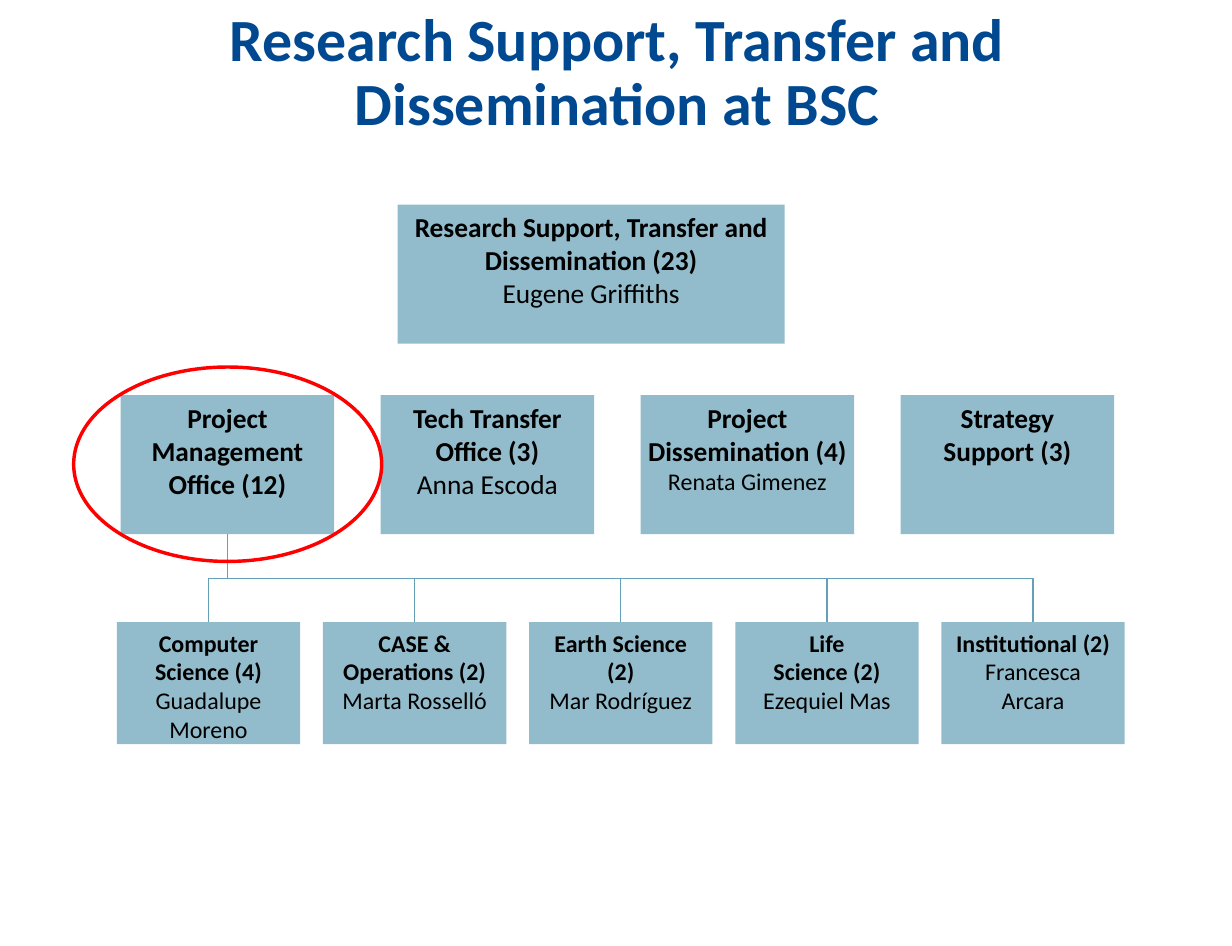
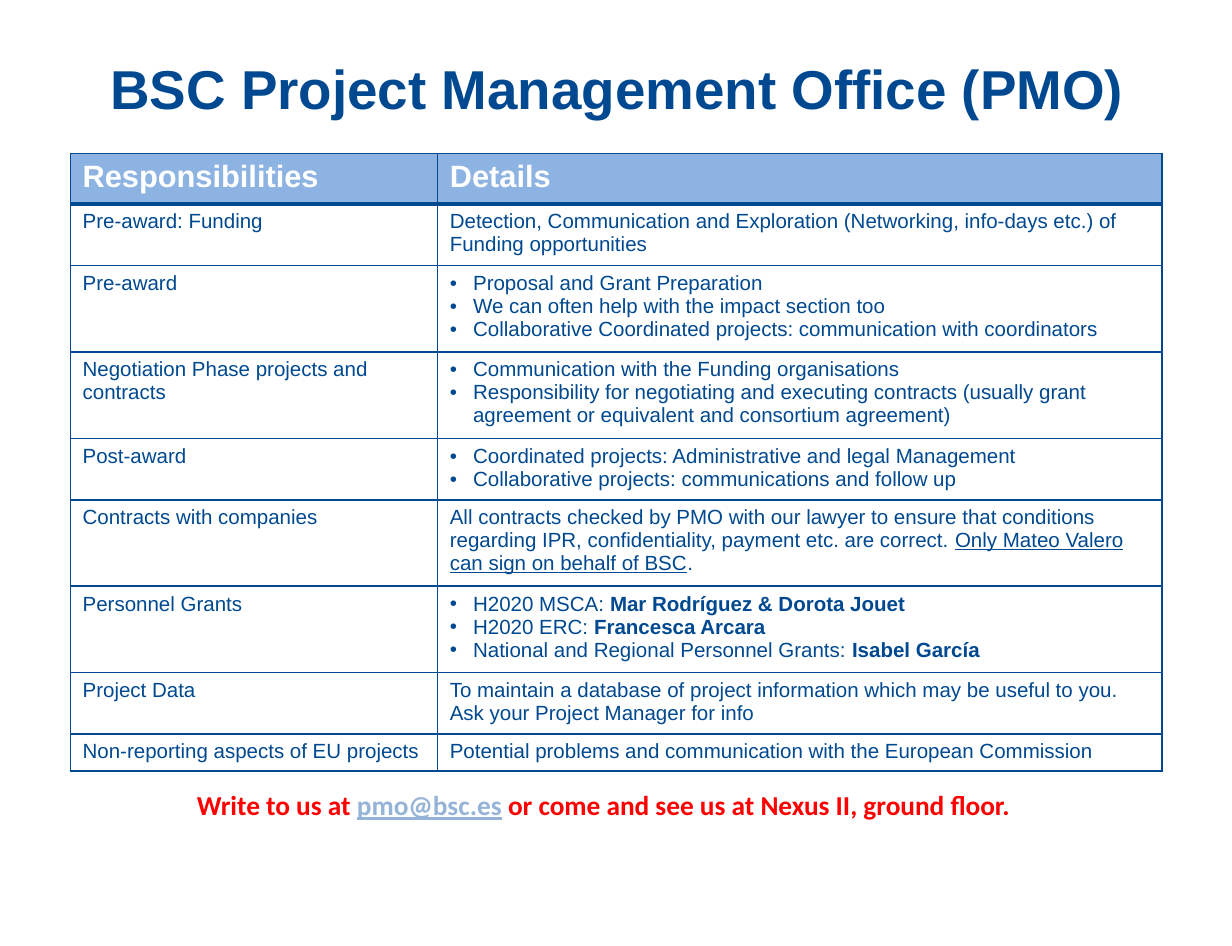
from lxml import etree
from pptx import Presentation
from pptx.dml.color import RGBColor
from pptx.enum.shapes import MSO_CONNECTOR, MSO_SHAPE
from pptx.enum.text import MSO_ANCHOR, PP_ALIGN
from pptx.oxml.ns import qn
from pptx.util import Cm, Pt

ELBOW = MSO_CONNECTOR.ELBOW
RECTANGLE, OVAL = MSO_SHAPE.RECTANGLE, MSO_SHAPE.OVAL
TOP, MIDDLE = MSO_ANCHOR.TOP, MSO_ANCHOR.MIDDLE
LEFT, CENTER = PP_ALIGN.LEFT, PP_ALIGN.CENTER
SIDE_TOP, SIDE_BOTTOM = 0, 2
TITLE_ONLY = 5

COLORS = {
    "navy": "004990", "teal": "64A0B6", "red": "FF0000", "black": "000000",
    "white": "FFFFFF", "header": "8DB3E2", "link": "95B3D7",
}
BOX_OPACITY = 70

# Each box: bold heading lines, then the person in charge
CHART_TITLE = "Research Support, Transfer and\vDissemination at BSC"
DEPARTMENT = (["Research Support, Transfer and Dissemination (23)"], "Eugene Griffiths")
OFFICES = [
    (["Project Management Office (12)"], ""),
    (["Tech Transfer Office (3)"], "Anna Escoda"),
    (["Project Dissemination (4)"], "Renata Gimenez"),
    (["Strategy Support (3)"], ""),
]
NARROW_OFFICE = 2
TEAMS = [
    (["Computer Science (4)"], "Guadalupe Moreno"),
    (["CASE &", "Operations (2)"], "Marta Rosselló"),
    (["Earth Science (2)"], "Mar Rodríguez"),
    (["Life", "Science (2)"], "Ezequiel Mas"),
    (["Institutional (2)"], "Francesca Arcara"),
]
# Row geometry in cm: left, top, width, height, pitch
DEPARTMENT_ROW = (8.2, 4.22, 7.98, 2.87, 0)
OFFICE_ROW = (2.49, 8.15, 4.4, 2.87, 5.36)
TEAM_ROW = (2.41, 12.83, 3.78, 2.52, 4.25)

# A span is plain text or (text, style); a list of paragraphs is bulleted
BOLD, UNDERLINE = {"bold": True}, {"underline": True}
PMO_TITLE = "BSC Project Management Office (PMO)"
HEADERS = ("Responsibilities", "Details")
DUTIES = [
    ("Pre-award: Funding",
     ("Detection, Communication and Exploration (Networking, info-days etc.) "
      "of Funding opportunities",)),
    ("Pre-award",
     [("Proposal and Grant Preparation",),
      ("We can often help with the impact section too",),
      ("Collaborative Coordinated projects: communication with coordinators",)]),
    ("Negotiation Phase projects and contracts",
     [("Communication with the Funding organisations",),
      ("Responsibility for negotiating and executing contracts (usually grant "
       "agreement or equivalent and consortium agreement)",)]),
    ("Post-award",
     [("Coordinated projects: Administrative and legal Management",),
      ("Collaborative projects: communications and follow up",)]),
    ("Contracts with companies",
     ("All contracts checked by PMO with our lawyer to ensure that conditions "
      "regarding IPR, confidentiality, payment etc. are correct. ",
      ("Only Mateo Valero can sign on behalf of BSC", UNDERLINE), ".")),
    ("Personnel Grants",
     [("H2020 MSCA: ", ("Mar Rodríguez & Dorota Jouet", BOLD)),
      ("H2020 ERC: ", ("Francesca Arcara", BOLD)),
      ("National and Regional Personnel Grants: ", ("Isabel García", BOLD))]),
    ("Project Data",
     ("To maintain a database of project information which may be useful to you. "
      "Ask your Project Manager for info",)),
    ("Non-reporting aspects of EU projects",
     ("Potential problems and communication with the European Commission",)),
]
COLUMN_WIDTHS = (7.57, 14.94)
ROW_HEIGHTS = (1.04, 1.27, 1.78, 1.78, 1.27, 1.78, 1.78, 1.27, 0.76)
CONTACT = (
    "Write to us at ",
    ("pmo@bsc.es", {"color": "link", "underline": True}),
    " or come and see us at Nexus II, ground floor.",
)


def rgb(name):
    return RGBColor.from_string(COLORS[name])


def write(para, spans, font, size, color, bold=False, align=LEFT):
    para.alignment = align
    for span in spans:
        text, style = (span, {}) if isinstance(span, str) else span
        run = para.add_run()
        run.text = text
        run.font.name, run.font.size = font, Pt(size)
        run.font.bold = style.get("bold", bold)
        run.font.underline = style.get("underline", False)
        run.font.color.rgb = rgb(style.get("color", color))


def next_paragraph(frame, index):
    return frame.add_paragraph() if index else frame.paragraphs[0]


def add_titled_page(deck, title, font, size, top, height):
    page = deck.slides.add_slide(deck.slide_layouts[TITLE_ONLY])
    box = page.shapes.title
    box.left, box.top, box.width, box.height = Cm(1.3), Cm(top), Cm(22.86), Cm(height)
    frame = box.text_frame
    frame.text = title
    frame.vertical_anchor = MIDDLE
    frame.word_wrap = True
    para = frame.paragraphs[0]
    para.alignment = CENTER
    for run in para.runs:
        run.font.name, run.font.size, run.font.bold = font, Pt(size), True
        run.font.color.rgb = rgb("navy")
    return page


def add_box(page, content, left, top, width, height, size, name_size, inset=0.25):
    box = page.shapes.add_shape(RECTANGLE, Cm(left), Cm(top), Cm(width), Cm(height))
    box.shadow.inherit = False
    box.fill.solid()
    box.fill.fore_color.rgb = rgb("teal")
    shade = box._element.spPr.find(qn("a:solidFill"))[0]
    etree.SubElement(shade, qn("a:alpha"), val=str(BOX_OPACITY * 1000))
    box.line.fill.background()
    frame = box.text_frame
    frame.word_wrap, frame.vertical_anchor = True, TOP
    frame.margin_left = frame.margin_right = Cm(inset)
    headings, person = content
    lines = [(heading, size, True) for heading in headings]
    if person:
        lines.append((person, name_size, False))
    for index, (text, points, bold) in enumerate(lines):
        write(next_paragraph(frame, index), [text], "Calibri", points, "black", bold, CENTER)
    return box


def add_box_row(page, contents, row, size, narrow=None):
    left, top, width, height, pitch = row
    return [
        add_box(page, content, left + index * pitch, top, width, height, size,
                14 if index == narrow else size, 0.1 if index == narrow else 0.25)
        for index, content in enumerate(contents)
    ]


def add_branch(page, parent, child):
    """Elbow that leaves the parent downwards and enters the child from above."""
    start_x, start_y = parent.left + parent.width // 2, parent.top + parent.height
    end_x, end_y = child.left + child.width // 2, child.top
    branch = page.shapes.add_connector(ELBOW, start_x, start_y, end_x, end_y)
    branch.begin_connect(parent, SIDE_BOTTOM)
    branch.end_connect(child, SIDE_TOP)
    across, down = abs(end_x - start_x), end_y - start_y
    # The elbow runs sideways first, so it is turned a quarter about its centre
    branch.left = (start_x + end_x - down) // 2
    branch.top = (start_y + end_y - across) // 2
    branch.width, branch.height = down, across
    rightward = end_x > start_x
    frame = branch._element.spPr.find(qn("a:xfrm"))
    frame.set("rot", str((270 if rightward else 90) * 60000))
    frame.set("flipH", "1" if rightward else "0")
    branch.line.color.rgb = rgb("teal")
    branch.line.width = Pt(0.75)
    etree.SubElement(branch._element.spPr, qn("a:effectLst"))


def add_highlight(page, left, top, width, height):
    ring = page.shapes.add_shape(OVAL, Cm(left), Cm(top), Cm(width), Cm(height))
    ring.shadow.inherit = False
    ring.fill.background()
    ring.line.color.rgb = rgb("red")
    ring.line.width = Pt(2)


def add_bullet(para):
    properties = para._p.get_or_add_pPr()
    properties.set("marL", str(Cm(0.48)))
    properties.set("indent", str(-Cm(0.48)))
    etree.SubElement(properties, qn("a:buFont"), typeface="Arial")
    etree.SubElement(properties, qn("a:buChar"), char="•")


def style_cell(cell, fill, top=1, bottom=1):
    cell.fill.solid()
    cell.fill.fore_color.rgb = rgb(fill)
    properties = cell._tc.get_or_add_tcPr()
    for index, (side, points) in enumerate(zip("LRTB", (1, 1, top, bottom))):
        border = etree.Element(qn(f"a:ln{side}"), w=str(Pt(points)))
        paint = etree.SubElement(border, qn("a:solidFill"))
        etree.SubElement(paint, qn("a:srgbClr"), val=COLORS["navy"])
        properties.insert(index, border)


def add_duties_table(page):
    table = page.shapes.add_table(
        len(ROW_HEIGHTS), len(COLUMN_WIDTHS), Cm(1.45), Cm(3.17),
        Cm(sum(COLUMN_WIDTHS)), Cm(sum(ROW_HEIGHTS))).table
    table.horz_banding = False
    for column, width in zip(table.columns, COLUMN_WIDTHS):
        column.width = Cm(width)
    for row, height in zip(table.rows, ROW_HEIGHTS):
        row.height = Cm(height)
    for cell, text in zip(table.rows[0].cells, HEADERS):
        style_cell(cell, "header", bottom=3)
        write(cell.text_frame.paragraphs[0], [text], "Arial", 18, "white", True)
    for number, (duty, details) in enumerate(DUTIES, 1):
        for cell, content in zip(table.rows[number].cells, ((duty,), details)):
            style_cell(cell, "white", top=3 if number == 1 else 1)
            bulleted = isinstance(content, list)
            for index, spans in enumerate(content if bulleted else [content]):
                para = next_paragraph(cell.text_frame, index)
                if bulleted:
                    add_bullet(para)
                write(para, spans, "Arial", 12, "navy")


def build_chart_page(deck):
    page = add_titled_page(deck, CHART_TITLE, "Calibri", 35, 0.36, 2.34)
    page.shapes.title.text_frame.paragraphs[0].line_spacing = 0.9
    add_box_row(page, [DEPARTMENT], DEPARTMENT_ROW, 16)
    offices = add_box_row(page, OFFICES, OFFICE_ROW, 16, NARROW_OFFICE)
    for team in add_box_row(page, TEAMS, TEAM_ROW, 14):
        add_branch(page, offices[0], team)
    add_highlight(page, 1.52, 7.57, 6.35, 4.01)


def build_pmo_page(deck):
    page = add_titled_page(deck, PMO_TITLE, "Arial", 32, 0.61, 2.39)
    add_duties_table(page)
    box = page.shapes.add_textbox(Cm(3.81), Cm(16.13), Cm(17.8), Cm(0.94))
    box.text_frame.word_wrap = True
    write(box.text_frame.paragraphs[0], CONTACT, "Calibri", 16, "red", True)


def main():
    deck = Presentation()
    deck.slide_width, deck.slide_height = Cm(25.4), Cm(19.51)
    build_chart_page(deck)
    build_pmo_page(deck)
    deck.save("out.pptx")


if __name__ == "__main__":
    main()
